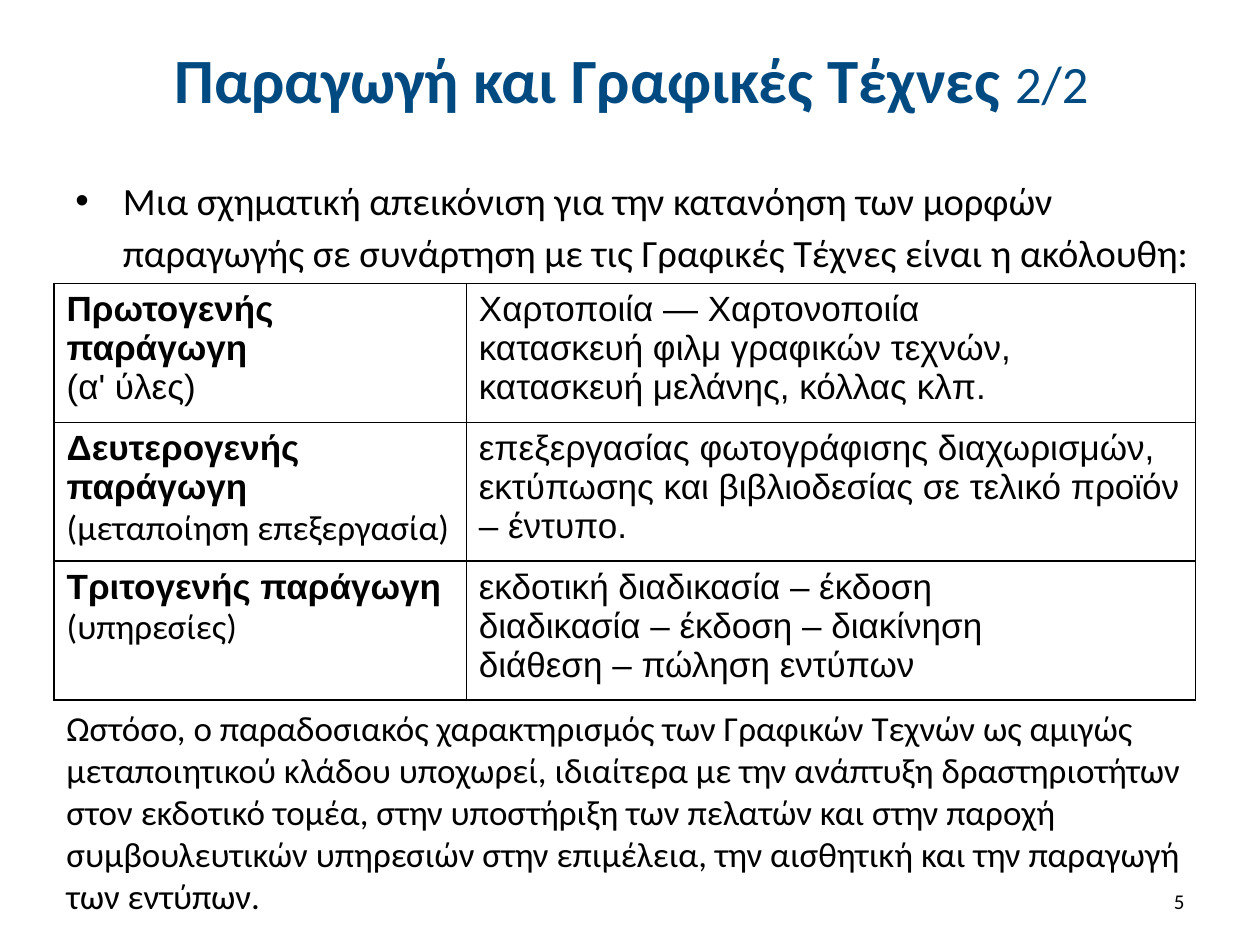
import dataclasses

import pptx
import pptx.dml.color
import pptx.enum.text
import pptx.oxml.ns
import pptx.util
from lxml import etree

Cm = pptx.util.Cm
Align = pptx.enum.text.PP_ALIGN
Anchor = pptx.enum.text.MSO_ANCHOR
qn = pptx.oxml.ns.qn


@dataclasses.dataclass(frozen=True)
class Theme:
    heading: str = "004A82"
    ink: str = "000000"
    sans: str = "Calibri"
    table_font: str = "Arial"
    title_size: int = 36
    counter_size: int = 30
    lead_size: int = 22
    text_size: int = 20
    number_size: int = 12
    border: float = 1


THEME = Theme()

# Each cell is a list of paragraphs: (text, format)
TERM = {"font": THEME.table_font, "bold": True}
PLAIN = {"font": THEME.table_font}
ROWS = [
    ([("Πρωτογενής παράγωγη", TERM), ("(α' ύλες)", PLAIN)],
     [("Χαρτοποιία ― Χαρτονοποιία", PLAIN),
      ("κατασκευή φιλμ γραφικών τεχνών, κατασκευή μελάνης, κόλλας κλπ.", PLAIN)]),
    ([("Δευτερογενής παράγωγη", TERM), ("(μεταποίηση επεξεργασία)", {})],
     [("επεξεργασίας φωτογράφισης διαχωρισμών, εκτύπωσης και βιβλιοδεσίας "
       "σε τελικό προϊόν – έντυπο.", PLAIN)]),
    ([("Τριτογενής παράγωγη", TERM), ("(υπηρεσίες)", {})],
     [("εκδοτική διαδικασία – έκδοση", PLAIN),
      ("διαδικασία – έκδοση – διακίνηση", PLAIN),
      ("διάθεση – πώληση εντύπων", PLAIN)]),
]


def add_span(para, text, *, size=THEME.text_size, font=THEME.sans,
             color=THEME.ink, bold=False):
    span = para.add_run()
    span.text = text
    span.font.name = font
    span.font.size = pptx.util.Pt(size)
    span.font.bold = bold
    span.font.color.rgb = pptx.dml.color.RGBColor.from_string(color)


def add_box(page, box, *, anchor=Anchor.TOP, align=Align.LEFT):
    """Add a wrapping text box and return its first paragraph."""
    frame = page.shapes.add_textbox(*map(Cm, box)).text_frame
    frame.word_wrap = True
    frame.vertical_anchor = anchor
    para = frame.paragraphs[0]
    para.alignment = align
    return para


def add_bullet(para, indent):
    props = para._p.get_or_add_pPr()
    props.set("marL", str(Cm(indent)))
    props.set("indent", str(-Cm(indent)))
    etree.SubElement(props, qn("a:buFont"), typeface=THEME.table_font)
    etree.SubElement(props, qn("a:buChar"), char="•")


def add_borders(cell):
    props = cell._tc.get_or_add_tcPr()
    for side in ("a:lnL", "a:lnR", "a:lnT", "a:lnB"):
        line = etree.SubElement(props, qn(side), w=str(pptx.util.Pt(THEME.border)))
        fill = etree.SubElement(line, qn("a:solidFill"))
        etree.SubElement(fill, qn("a:srgbClr"), val=THEME.ink)


def title(page, box):
    para = add_box(page, box, anchor=Anchor.MIDDLE, align=Align.CENTER)
    add_span(para, "Παραγωγή και Γραφικές Τέχνες ", size=THEME.title_size,
             color=THEME.heading, bold=True)
    add_span(para, "2/2", size=THEME.counter_size, color=THEME.heading)


def lead(page, box):
    para = add_box(page, box)
    add_bullet(para, 0.96)
    para.line_spacing = 1.12
    add_span(para, "Mια σχηματική απεικόνιση για την κατανόηση των μορφών παραγωγής "
                   "σε συνάρτηση με τις Γραφικές Τέχνες είναι η ακόλουθη:",
             size=THEME.lead_size)


def production_table(page, box):
    left, top, width, height = box
    table = page.shapes.add_table(len(ROWS), 2, *map(Cm, box)).table
    table.first_row = table.horz_banding = False
    term_width = 8.31
    table.columns[0].width = Cm(term_width)
    table.columns[1].width = Cm(width - term_width)
    for row, contents in zip(table.rows, ROWS):
        row.height = Cm(height / len(ROWS))
        for cell, lines in zip(row.cells, contents):
            add_borders(cell)
            cell.fill.background()
            for index, (text, style) in enumerate(lines):
                frame = cell.text_frame
                para = frame.add_paragraph() if index else frame.paragraphs[0]
                add_span(para, text, **style)


def conclusion(page, box):
    add_span(add_box(page, box),
             "Ωστόσο, ο παραδοσιακός χαρακτηρισμός των Γραφικών Tεχνών ως αμιγώς "
             "μεταποιητικού κλάδου υποχωρεί, ιδιαίτερα με την ανάπτυξη "
             "δραστηριοτήτων στον εκδοτικό τομέα, στην υποστήριξη των πελατών και "
             "στην παροχή συμβουλευτικών υπηρεσιών στην επιμέλεια, την αισθητική "
             "και την παραγωγή των εντύπων.")


def page_number(page, box):
    para = add_box(page, box, anchor=Anchor.MIDDLE, align=Align.RIGHT)
    add_span(para, "5", size=THEME.number_size)


def main():
    deck = pptx.Presentation()
    deck.slide_width, deck.slide_height = Cm(25.4), Cm(19.05)
    page = deck.slides.add_slide(deck.slide_layouts[6])

    # Heading and introduction
    title(page, (1.3, 0.33, 22.86, 2.51))
    lead(page, (1.27, 3.33, 23.42, 4.39))
    page_number(page, (18.21, 17.65, 5.92, 1.02))

    # Forms of production and closing remark
    production_table(page, (1.09, 5.72, 23.01, 7.8))
    conclusion(page, (1.09, 14.12, 23.39, 4.52))

    deck.save("out.pptx")


if __name__ == "__main__":
    main()
